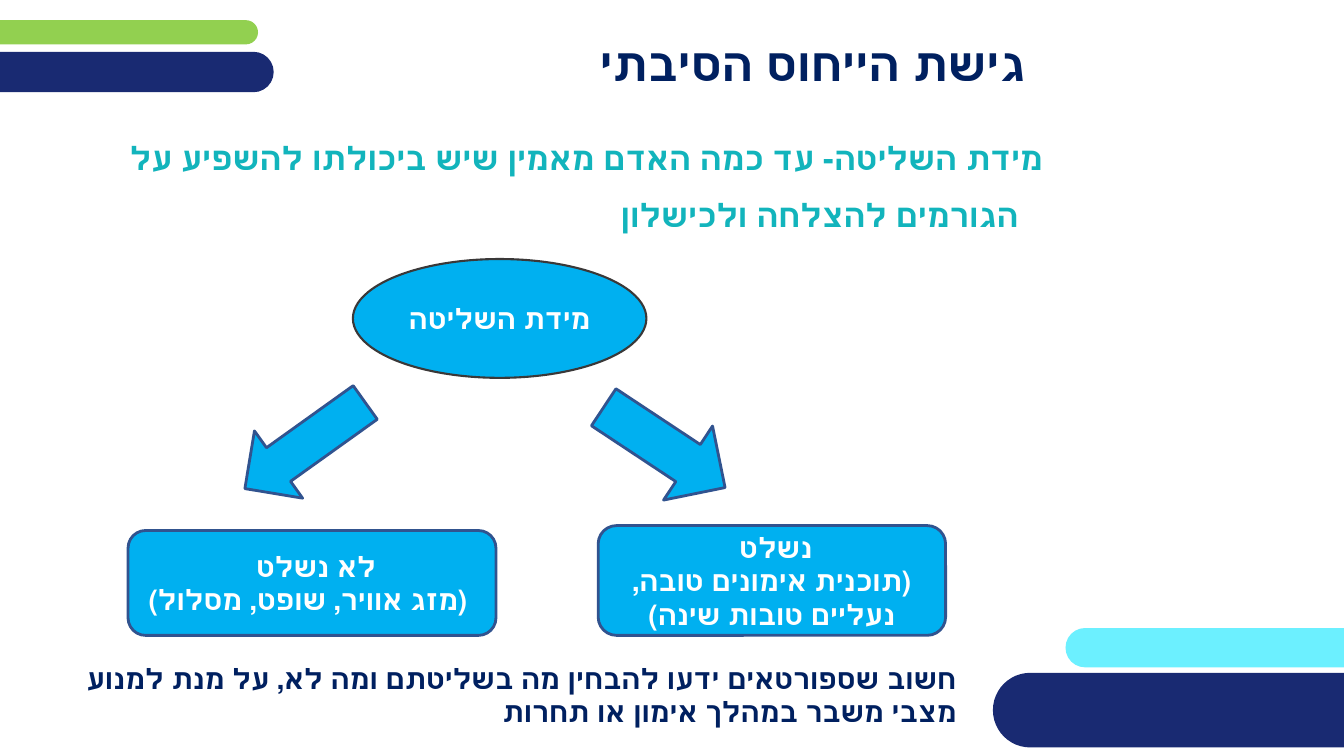
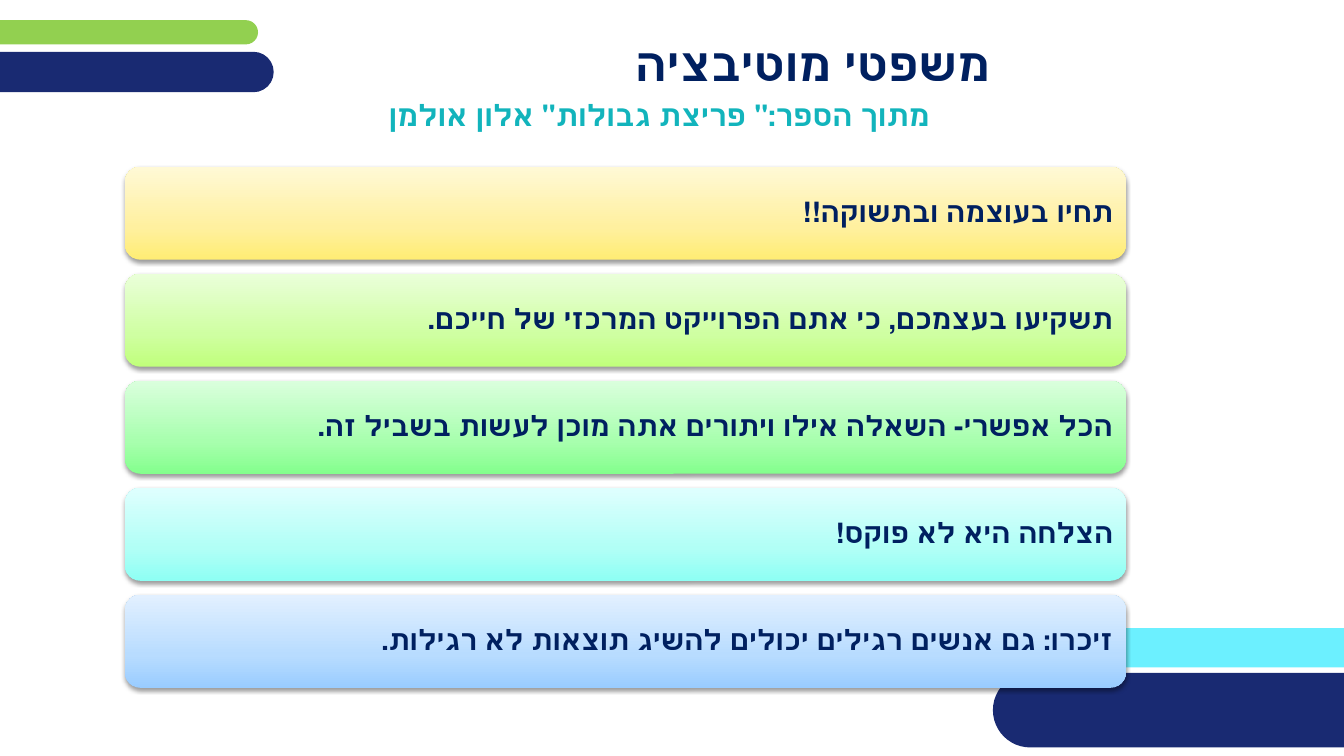
from collections import namedtuple

from lxml import etree
from pptx import Presentation
from pptx import util as u
from pptx.dml.color import RGBColor
from pptx.enum import shapes, text
from pptx.oxml import ns

Box = namedtuple("Box", "left top width height")
SLIDE = Box(0, 0, u.Inches(13.33), u.Inches(7.5))
FONT = "Quicksand"
COLORS = {
    "navy": "192A72",
    "green": "92D050",
    "cyan": "6CF0FF",
    "title": "002060",
    "teal": "12B4BC",
    "blue": "00B0F0",
    "outline": "31538F",
    "charcoal": "3A3838",
    "white": "FFFFFF",
    "shadow": "000000",
}
KIND = shapes.MSO_SHAPE
ALIGN = text.PP_ALIGN
ANCHOR = text.MSO_ANCHOR

BANDS = [
    ("cyan", (79.28, 83.07, 39.08, 5.2)),
    ("green", (-2.1, 2.67, 21.3, 3.2)),
    ("navy", (-3.98, 6.85, 24.35, 5.35)),
    ("navy", (73.88, 89, 30.83, 9.87)),
]
SENTENCES = [
    ("תחיו בעוצמה ובתשוקה!!", ("FFED74", "FFF09F", "FFF9D6")),
    ("תשקיעו בעצמכם, כי אתם הפרוייקט המרכזי של חייכם.", ("C0FF7B", "CFFFA2", "EAFFD9")),
    ("הכל אפשרי- השאלה אילו ויתורים אתה מוכן לעשות בשביל זה.", ("84FF8D", "A8FFAE", "DAFFDD")),
    ("הצלחה היא לא פוקס!", ("8EFFF4", "B1FFF6", "DFFFFE")),
    ("זיכרו: גם אנשים רגילים יכולים להשיג תוצאות לא רגילות.", ("99CCFF", "B8DCFF", "E2F0FF")),
]


def percent(box, left, top, width, height):
    return Box(
        round(box.left + box.width * left / 100),
        round(box.top + box.height * top / 100),
        round(box.width * width / 100),
        round(box.height * height / 100),
    )


def rgb(name):
    return RGBColor.from_string(COLORS[name])


def write(shape, words, size=20, color="title", align=ALIGN.RIGHT, anchor=ANCHOR.MIDDLE,
          spacing=None, hanging=False, inset=0.1, rtl=True):
    frame = shape.text_frame
    frame.word_wrap = True
    frame.vertical_anchor = anchor
    frame.margin_left = frame.margin_right = u.Inches(inset)
    paragraph = frame.paragraphs[0]
    paragraph.text = words
    paragraph.alignment = align
    if spacing:
        paragraph.line_spacing = spacing
    properties = paragraph._p.get_or_add_pPr()
    if rtl:
        properties.set("rtl", "1")
    if hanging:
        properties.set("marL", str(u.Inches(0.5)))
        properties.set("indent", str(u.Inches(-0.25)))
    for run in paragraph.runs:
        run.font.name = FONT
        run.font.size = u.Pt(size)
        run.font.bold = True
        run.font.color.rgb = rgb(color)


def add_text(slide, box, words, **style):
    write(slide.shapes.add_textbox(*box), words, **style)


def add_shape(slide, kind, box, fill=None, line=None, line_width=2, rotation=0):
    shape = slide.shapes.add_shape(kind, *box)
    shape.shadow.inherit = False
    shape.rotation = rotation
    if fill:
        shape.fill.solid()
        shape.fill.fore_color.rgb = rgb(fill)
    if line:
        shape.line.color.rgb = rgb(line)
        shape.line.width = u.Pt(line_width)
    else:
        shape.line.fill.background()
    return shape


def add_color(parent, value):
    return etree.SubElement(parent, ns.qn("a:srgbClr"), val=value)


def shade(shape, colors):
    shape.fill.gradient()
    shape.fill.gradient_angle = 90
    stops = shape._element.spPr.find(".//" + ns.qn("a:gsLst"))
    for stop in list(stops):
        stops.remove(stop)
    for position, color in zip((0, 35, 100), colors):
        add_color(etree.SubElement(stops, ns.qn("a:gs"), pos=str(position * 1000)), color)


def drop_shadow(shape):
    effects = shape._element.spPr.find(ns.qn("a:effectLst"))
    shadow = etree.SubElement(effects, ns.qn("a:outerShdw"), blurRad="40000", dist="20000",
                              dir="5400000", rotWithShape="0")
    etree.SubElement(add_color(shadow, COLORS["shadow"]), ns.qn("a:alpha"), val="38000")


def new_slide(presentation, title):
    slide = presentation.slides.add_slide(presentation.slide_layouts[6])
    for color, area in BANDS:
        band = add_shape(slide, KIND.ROUNDED_RECTANGLE, percent(SLIDE, *area), color)
        band.adjustments[0] = 0.5
    add_text(slide, percent(SLIDE, 20.93, 3.07, 79.05, 10.53), title, size=33, align=ALIGN.CENTER)
    return slide


def control_diagram(slide, box):
    nodes = [
        (KIND.OVAL, (27.5, 0, 35.9, 31.6), "charcoal", 1.5, "מידת השליטה"),
        (KIND.ROUNDED_RECTANGLE, (57.5, 70.9, 42.5, 29.2), "outline", 2,
         "נשלט \n(תוכנית אימונים טובה, נעליים טובות שינה)"),
        (KIND.ROUNDED_RECTANGLE, (0, 72.2, 45, 27.9), "outline", 2,
         " לא נשלט\n (מזג אוויר, שופט, מסלול)"),
    ]
    arrows = [
        (KIND.RIGHT_ARROW, (56.7, 38.3, 17.8, 23.6), 33.5),
        (KIND.LEFT_ARROW, (12.6, 38.6, 18.1, 22), 324.4),
    ]
    for kind, area, line, width, words in nodes:
        node = add_shape(slide, kind, percent(box, *area), "blue", line, width)
        write(node, words, color="white", align=ALIGN.CENTER, rtl=False)
    for kind, area, rotation in arrows:
        add_shape(slide, kind, percent(box, *area), "blue", "outline", rotation=rotation)


def sentence_bars(slide, box, gap=2.7):
    height = (100 - gap * (len(SENTENCES) - 1)) / len(SENTENCES)
    for row, (words, colors) in enumerate(SENTENCES):
        area = percent(box, 0, row * (height + gap), 100, height)
        bar = add_shape(slide, KIND.ROUNDED_RECTANGLE, area)
        shade(bar, colors)
        drop_shadow(bar)
        write(bar, words, spacing=0.9, inset=0.08)


def attribution_slide(presentation):
    slide = new_slide(presentation, "גישת הייחוס הסיבתי")
    add_text(slide, percent(SLIDE, 4.2, 15.47, 76.13, 15.73),
             "מידת השליטה- עד כמה האדם מאמין שיש ביכולתו להשפיע על הגורמים להצלחה ולכישלון",
             size=23, color="teal", spacing=1.5, hanging=True)
    control_diagram(slide, percent(SLIDE, 9.53, 34.27, 60.83, 49.73))
    add_text(slide, percent(SLIDE, 2.48, 86.8, 69.45, 9.47),
             "חשוב שספורטאים ידעו להבחין מה בשליטתם ומה לא, על מנת למנוע מצבי משבר במהלך אימון או תחרות",
             anchor=ANCHOR.TOP, rtl=False)


def motivation_slide(presentation):
    slide = new_slide(presentation, "משפטי מוטיבציה")
    add_text(slide, percent(SLIDE, 3.68, 11.47, 68.1, 7.87),
             'מתוך הספר:" פריצת גבולות" אלון אולמן',
             size=21, color="teal", spacing=0.9, hanging=True)
    sentence_bars(slide, percent(SLIDE, 9.3, 22.05, 74.48, 68.93))


def main():
    presentation = Presentation()
    presentation.slide_width = SLIDE.width
    presentation.slide_height = SLIDE.height
    attribution_slide(presentation)
    motivation_slide(presentation)
    presentation.save("out.pptx")


if __name__ == "__main__":
    main()
